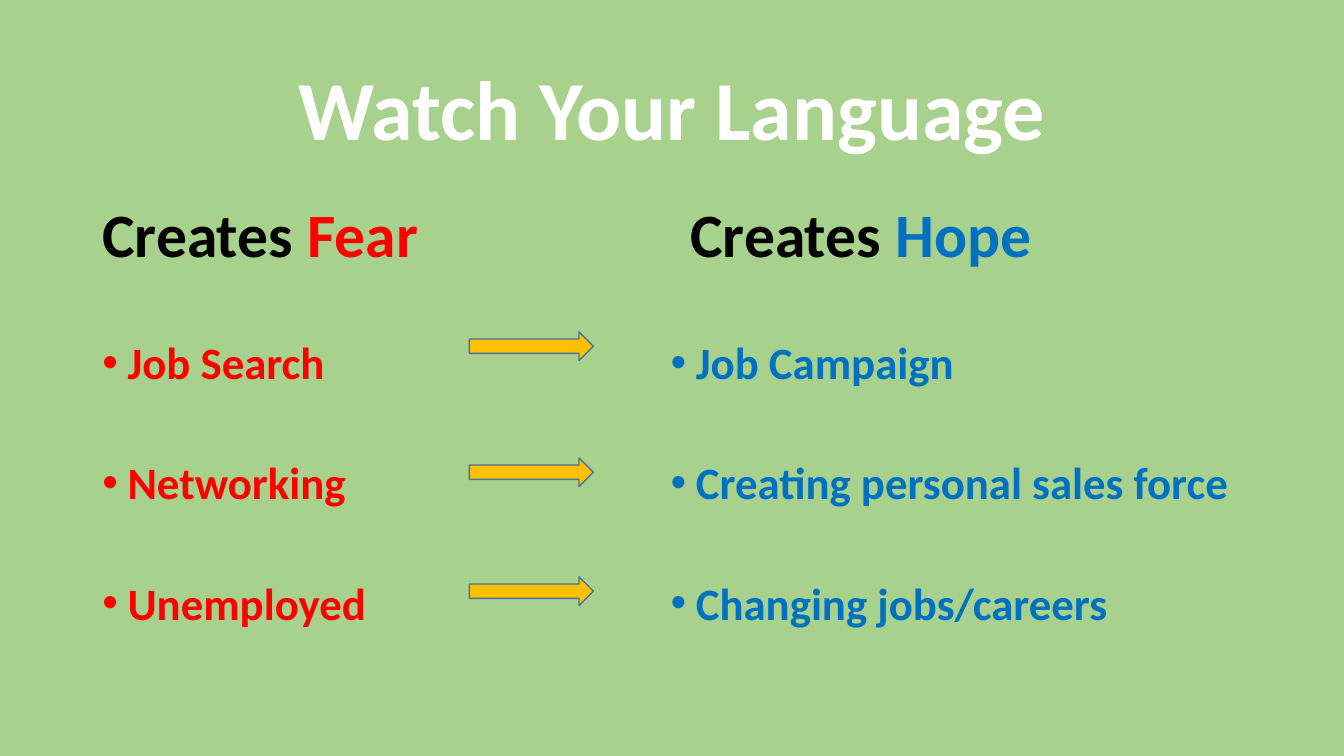
from lxml import etree
from pptx import Presentation
from pptx.dml.color import RGBColor
from pptx.enum import shapes, text
from pptx.oxml import ns
from pptx.util import Pt

# Content
BLACK, WHITE, RED, BLUE = "000000", "FFFFFF", "FF0000", "0070C0"
GREEN, GOLD, EDGE = "A9D18E", "FFC000", "43739E"
TITLE = "Watch Your Language"
# heading word, colour, heading left, list left, right edge, items
COLUMNS = [
    ("Fear", RED, 66, 66, 472, ["Job Search", "Networking", "Unemployed"]),
    ("Hope", BLUE, 486, 472, 894,
     ["Job Campaign", "Creating personal sales force", "Changing jobs/careers"]),
]
ARROW_TOPS = [237, 327, 412]


def color(value):
    return RGBColor.from_string(value)


def add_text(s, box, paragraphs, size, anchor="TOP", bullet=False, **formats):
    """Each paragraph is a list of (text, colour) runs."""
    tf = s.shapes.add_textbox(*map(Pt, box)).text_frame
    tf.word_wrap = True
    tf.vertical_anchor = text.MSO_ANCHOR[anchor]
    for i, runs in enumerate(paragraphs):
        p = tf.add_paragraph() if i else tf.paragraphs[0]
        if bullet:
            pPr = p._p.get_or_add_pPr()
            pPr.set("marL", str(Pt(18)))
            pPr.set("indent", str(-Pt(18)))
            etree.SubElement(pPr, ns.qn("a:buFont")).set("typeface", "Arial")
            etree.SubElement(pPr, ns.qn("a:buChar")).set("char", "•")
        if i:
            p.space_before = Pt(9)
        for name, value in formats.items():
            setattr(p, name, value)
        for words, ink in runs:
            r = p.add_run()
            r.text = words
            for name, value in dict(name="Calibri", size=Pt(size), bold=True).items():
                setattr(r.font, name, value)
            r.font.color.rgb = color(ink)


# Slide
prs = Presentation()
prs.slide_width, prs.slide_height = Pt(960), Pt(540)
s = prs.slides.add_slide(prs.slide_layouts[6])
s.background.fill.solid()
s.background.fill.fore_color.rgb = color(GREEN)

# Title
add_text(s, (66, 28.75, 828, 104.4), [[(TITLE, WHITE)]], 60, "MIDDLE",
         alignment=text.PP_ALIGN.CENTER, line_spacing=0.9)

# Headings and lists
for word, ink, head_left, list_left, right, items in COLUMNS:
    add_text(s, (head_left, 132.4, right - head_left, 64.9),
             [[("Creates ", BLACK), (word, ink)]], 44, "BOTTOM", line_spacing=0.9)
    add_text(s, (list_left, 197.3, right - list_left, 290),
             [[(item, ink)] for item in items], 32, bullet=True, line_spacing=2.0)

# Arrows from fear to hope
for top in ARROW_TOPS:
    sp = s.shapes.add_shape(shapes.MSO_SHAPE.RIGHT_ARROW,
                            Pt(335.3), Pt(top), Pt(88.6), Pt(20.6))
    sp.shadow.inherit = False
    sp.fill.solid()
    sp.fill.fore_color.rgb = color(GOLD)
    sp.line.color.rgb = color(EDGE)
    sp.line.width = Pt(1)

prs.save("out.pptx")
